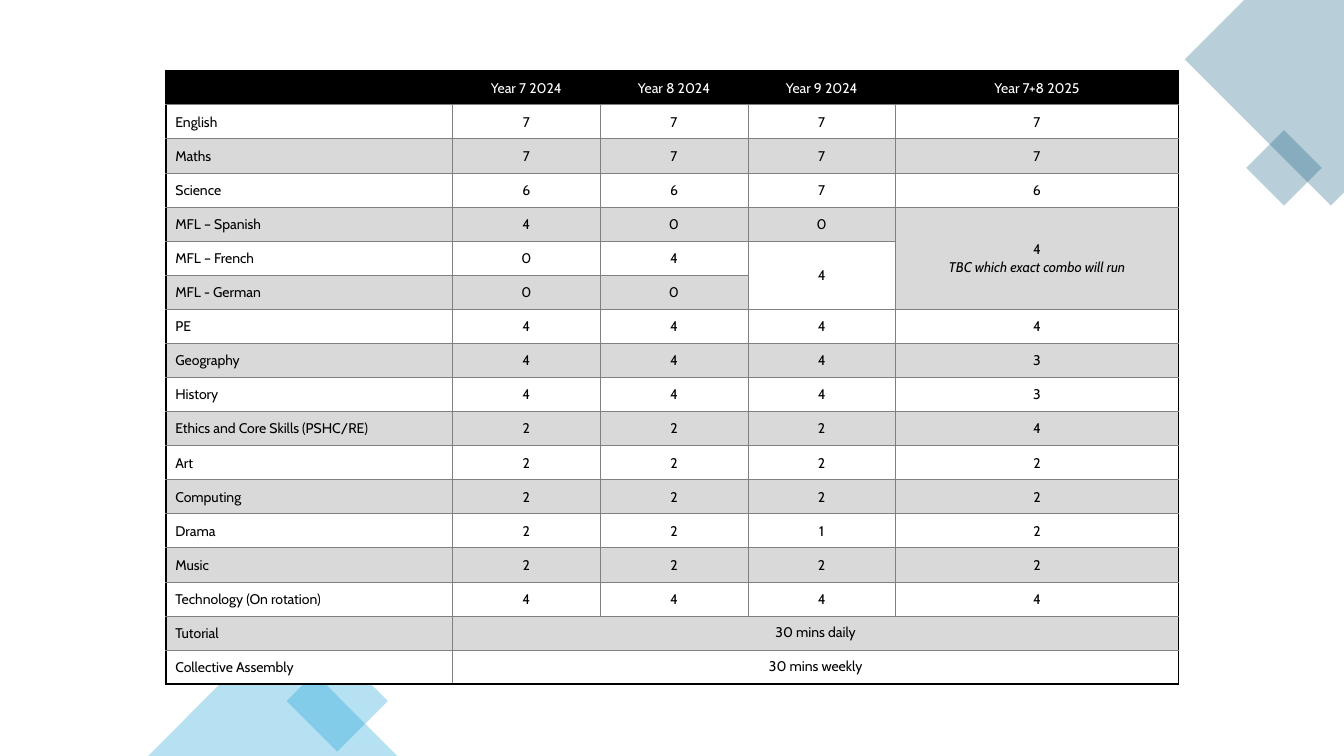
from dataclasses import dataclass

from lxml import etree
from pptx import Presentation
from pptx import util as u
from pptx.dml.color import RGBColor
from pptx.enum import shapes, text
from pptx.oxml import ns


@dataclass(frozen=True)
class Theme:
    font: str = "Cabin"
    size: float = 10
    line_spacing: float = 12.8
    ink: str = "000000"
    paper: str = "FFFFFF"
    band: str = "D9D9D9"
    grid: str = "808080"
    teal: str = "156082"
    sky: str = "0F9ED5"
    opacity: int = 30
    frame_width: float = 1.5
    grid_width: float = 0.5
    no_table_style: str = "{2D5ABB26-0587-4C30-8999-92F81FD0307C}"


THEME = Theme()

YEARS = ["", "Year 7 2024", "Year 8 2024", "Year 9 2024", "Year 7+8 2025"]
LESSONS = [
    ("English", 7, 7, 7, 7),
    ("Maths", 7, 7, 7, 7),
    ("Science", 6, 6, 7, 6),
    ("MFL – Spanish", 4, 0, 0, "4\nTBC which exact combo will run"),
    ("MFL – French", 0, 4, 4, ""),
    ("MFL - German", 0, 0, "", ""),
    ("PE", 4, 4, 4, 4),
    ("Geography", 4, 4, 4, 3),
    ("History", 4, 4, 4, 3),
    ("Ethics and Core Skills (PSHC/RE)", 2, 2, 2, 4),
    ("Art", 2, 2, 2, 2),
    ("Computing", 2, 2, 2, 2),
    ("Drama", 2, 2, 1, 2),
    ("Music", 2, 2, 2, 2),
    ("Technology (On rotation)", 4, 4, 4, 4),
    ("Tutorial", "30 mins daily", "", "", ""),
    ("Collective Assembly", "30 mins weekly", "", "", ""),
]
COLUMN_WIDTHS = [2.84, 1.46, 1.47, 1.46, 2.81]
# first row, first column, last row, last column
MERGES = [(4, 4, 6, 4), (5, 3, 6, 3), (16, 1, 16, 4), (17, 1, 17, 4)]


def write(frame, wording, color=THEME.ink, align=text.PP_ALIGN.CENTER):
    """Put each line in its own paragraph; lines after the first are italic."""
    for index, line in enumerate(wording.split("\n")):
        paragraph = frame.add_paragraph() if index else frame.paragraphs[0]
        paragraph.alignment = align
        paragraph.line_spacing = u.Pt(THEME.line_spacing)
        if not line:
            # An empty cell still needs the small type size to keep its row low
            etree.SubElement(paragraph._p, ns.qn("a:endParaRPr"),
                             sz=str(THEME.size * 100))
            continue
        run = paragraph.add_run()
        run.text = line
        run.font.name = THEME.font
        run.font.size = u.Pt(THEME.size)
        run.font.italic = index > 0
        run.font.color.rgb = RGBColor.from_string(color)


def tint(shape, color):
    """Give a shape a translucent fill without outline or shadow."""
    shape.shadow.inherit = False
    shape.line.fill.background()
    shape.fill.solid()
    shape.fill.fore_color.rgb = RGBColor.from_string(color)
    srgb = shape._element.spPr.find(".//" + ns.qn("a:srgbClr"))
    etree.SubElement(srgb, ns.qn("a:alpha"), val=str(THEME.opacity * 1000))


def add_tinted(slide, preset, box, color, rotation=0):
    shape = slide.shapes.add_shape(preset, *map(u.Inches, box))
    shape.rotation = rotation
    tint(shape, color)


def add_top_corner(slide, left, top):
    """Large cut diamond with a small one overlapping its lower edge."""
    outline = [(0.59, 0), (0, 0.59), (1.45, 2.04), (1.58, 1.91), (1.58, 0)]
    points = [(u.Inches(left + x), u.Inches(top + y)) for x, y in outline]
    builder = slide.shapes.build_freeform(*points[0])
    builder.add_line_segments(points[1:], close=True)
    tint(builder.convert_to_shape(), THEME.teal)
    add_tinted(slide, shapes.MSO_SHAPE.RECTANGLE,
               (left + 0.72, top + 1.4, 0.53, 0.53), THEME.teal, 315)


def add_bottom_corner(slide, left, top):
    add_tinted(slide, shapes.MSO_SHAPE.RECTANGLE,
               (left + 1.52, top + 0.34, 0.71, 0.71), THEME.sky, 45)
    add_tinted(slide, shapes.MSO_SHAPE.ISOSCELES_TRIANGLE,
               (left, top, 2.47, 1.24), THEME.sky)


def set_borders(cell, edges):
    """Draw each side given: thick black where it is outer, else thin grey."""
    properties = cell._tc.get_or_add_tcPr()
    for side, outer in edges.items():
        width = THEME.frame_width if outer else THEME.grid_width
        line = etree.SubElement(properties, ns.qn(f"a:ln{side}"), w=str(u.Pt(width)))
        fill = etree.SubElement(line, ns.qn("a:solidFill"))
        etree.SubElement(fill, ns.qn("a:srgbClr"),
                         val=THEME.ink if outer else THEME.grid)


def format_cell(cell, row, column, wording, row_count, column_count):
    header = row == 0
    last_row = row + max(cell.span_height, 1) - 1
    last_column = column + max(cell.span_width, 1) - 1
    edges = {"L": column == 0, "R": last_column == column_count - 1,
             "T": header, "B": last_row == row_count - 1}
    # The header band has no lines between its columns
    set_borders(cell, {side: outer for side, outer in edges.items()
                       if outer or side == "B" or not header})

    background = THEME.ink if header else (THEME.paper if row % 2 else THEME.band)
    cell.fill.solid()
    cell.fill.fore_color.rgb = RGBColor.from_string(background)

    cell.margin_left = cell.margin_right = u.Inches(0.09)
    cell.margin_top = cell.margin_bottom = u.Inches(0.07)
    full_width = cell.span_width > 1
    cell.vertical_anchor = (text.MSO_ANCHOR.TOP if full_width
                            else text.MSO_ANCHOR.MIDDLE)
    write(cell.text_frame, wording,
          color=THEME.paper if header else THEME.ink,
          align=text.PP_ALIGN.CENTER if column else text.PP_ALIGN.LEFT)


def add_lesson_table(slide, left, top, width, height):
    rows = [YEARS, *LESSONS]
    frame = slide.shapes.add_table(len(rows), len(YEARS),
                                   *map(u.Inches, (left, top, width, height)))
    table = frame.table
    table.horz_banding = False
    table._tbl.tblPr.find(ns.qn("a:tableStyleId")).text = THEME.no_table_style
    for column, column_width in zip(table.columns, COLUMN_WIDTHS):
        column.width = u.Inches(column_width)
    for row in table.rows:
        row.height = u.Inches(height / len(rows))
    for first_row, first_column, last_row, last_column in MERGES:
        table.cell(first_row, first_column).merge(table.cell(last_row, last_column))

    for r, values in enumerate(rows):
        for c, value in enumerate(values):
            cell = table.cell(r, c)
            if not cell.is_spanned:
                format_cell(cell, r, c, str(value), len(rows), len(YEARS))


def main():
    presentation = Presentation()
    presentation.slide_width = u.Inches(13.33)
    presentation.slide_height = u.Inches(7.5)
    slide = presentation.slides.add_slide(presentation.slide_layouts[6])
    add_top_corner(slide, 11.75, 0)
    add_bottom_corner(slide, 1.47, 6.26)
    add_lesson_table(slide, 1.65, 0.7, sum(COLUMN_WIDTHS), 6.09)
    presentation.save("out.pptx")


if __name__ == "__main__":
    main()
